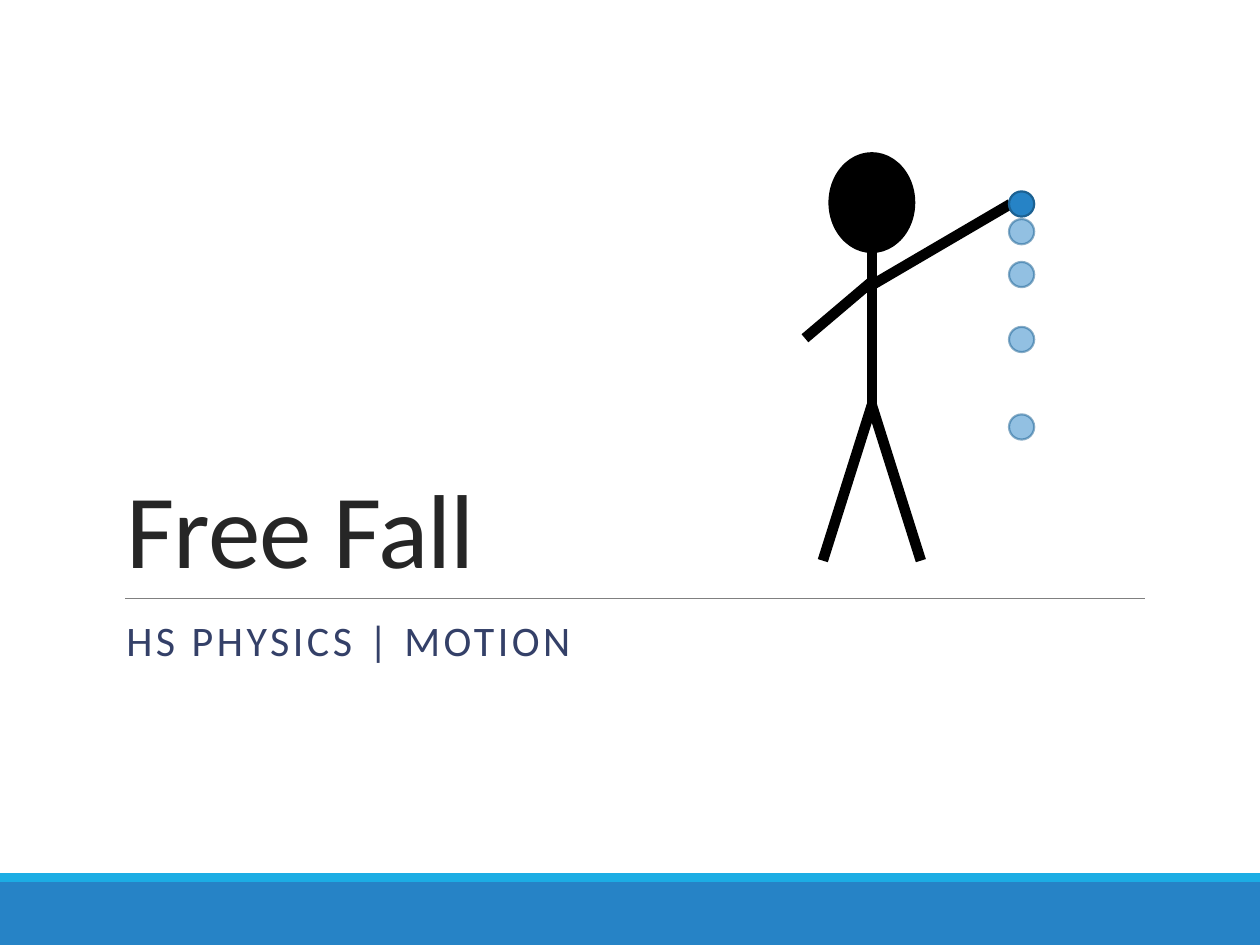
from pptx import Presentation
from pptx.dml.color import RGBColor
from pptx.enum.shapes import MSO_CONNECTOR, MSO_SHAPE
from pptx.enum.text import MSO_ANCHOR, MSO_AUTO_SIZE, PP_ALIGN
from pptx.oxml.ns import qn
from pptx.util import Pt
from lxml.etree import SubElement

BLUE = RGBColor(0x26, 0x83, 0xC6)
CYAN = RGBColor(0x1C, 0xAD, 0xE4)
EDGE = RGBColor(0x1C, 0x61, 0x92)
FADED = RGBColor(0x19, 0x5F, 0x91)
GREY = RGBColor(0x80, 0x80, 0x80)
DARK = RGBColor(0x26, 0x26, 0x26)
NAVY = RGBColor(0x34, 0x40, 0x68)
BLACK = RGBColor(0, 0, 0)


def add_form(slide, kind, box, fill, edge=None, alpha=None):
    form = slide.shapes.add_shape(kind, *map(Pt, box))
    form.shadow.inherit = False
    form.fill.solid()
    form.fill.fore_color.rgb = fill
    if edge is None:
        form.line.fill.background()
    else:
        form.line.color.rgb = edge
        form.line.width = Pt(1.25)
    if alpha is not None:
        for color in form._element.spPr.iter(qn("a:srgbClr")):
            SubElement(color, qn("a:alpha"), val=str(alpha * 1000))


def add_line(slide, start, end, color, width):
    line = slide.shapes.add_connector(
        MSO_CONNECTOR.STRAIGHT, *map(Pt, (*start, *end)))
    line.line.color.rgb = color
    line.line.width = Pt(width)
    SubElement(line._element.spPr, qn("a:effectLst"))


def fill_text(holder, box, text, anchor, track, para, font):
    sides = ("left", "top", "width", "height")
    for side, size in zip(sides, box):
        setattr(holder, side, Pt(size))
    frame = holder.text_frame
    frame.text = text
    frame.word_wrap = True
    frame.auto_size = MSO_AUTO_SIZE.NONE
    frame.vertical_anchor = anchor
    first = frame.paragraphs[0]
    run = first.runs[0]
    for name, value in para.items():
        setattr(first, name, value)
    for name, value in font.items():
        setattr(run.font, name, value)
    run.font.color.rgb = NAVY if track > 0 else DARK
    run._r.get_or_add_rPr().set("spc", str(round(track * 100)))


def add_footer(slide, box):
    left, top, width, height = box
    strip = 5
    add_form(slide, MSO_SHAPE.RECTANGLE,
             (left, top + strip, width, height - strip), BLUE)
    add_form(slide, MSO_SHAPE.RECTANGLE, (left, top, width, strip), CYAN)


def add_heads(slide, box):
    left, top, width, height = box
    rule = top + 282
    title, sub = slide.placeholders
    fill_text(title, (left, top, width, 281), "Free Fall",
              MSO_ANCHOR.BOTTOM, -0.5,
              {"alignment": PP_ALIGN.LEFT, "line_spacing": 0.85},
              {"name": "Calibri", "size": Pt(60)})
    fill_text(sub, (left, rule + 8.6, 594, height - 290.6),
              "HS PHYSICS | MOTION", MSO_ANCHOR.TOP, 2,
              {"alignment": PP_ALIGN.LEFT, "line_spacing": 0.9,
               "space_before": Pt(0), "space_after": Pt(2)},
              {"name": "Calibri", "size": Pt(24)})
    # Rule between title and subtitle
    add_line(slide, (left + 6.5, rule), (left + 589.5, rule), GREY, 0.5)


def add_man(slide, box):
    left, top, width, height = box
    mid = left + 38.2
    hip = (mid, top + 144)
    foot = top + height
    add_form(slide, MSO_SHAPE.OVAL, (mid - 24.2, top, 48.4, 56.4),
             BLACK, BLACK)
    limbs = [
        ((mid, top + 49), (mid, top + 147.5)),           # body
        (hip, (mid - 28, foot)),                         # legs
        (hip, (mid + 28, foot)),
        ((left, top + 105.7), (mid + 0.6, top + 72.8)),  # arms
        ((left + width, top + 29), (mid + 0.6, top + 75)),
    ]
    for start, end in limbs:
        add_line(slide, start, end, BLACK, 6)


def add_balls(slide, box):
    left, top, size, _ = box
    # Earlier ball last, so that it lies on top
    for drop in (15.8, 40.3, 77.4, 127.4):
        add_form(slide, MSO_SHAPE.OVAL, (left, top + drop, size, size),
                 BLUE, FADED, 50)
    add_form(slide, MSO_SHAPE.OVAL, (left, top, size, size), BLUE, EDGE)


def main():
    deck = Presentation()
    deck.slide_width, deck.slide_height = Pt(720), Pt(540)
    slide = deck.slides.add_slide(deck.slide_layouts[0])
    add_footer(slide, (0, 499, 720, 41))
    add_heads(slide, (65, 60, 620, 380.6))
    add_man(slide, (460, 87.6, 117.4, 232.8))
    add_balls(slide, (576.6, 109.4, 14.4, 141.8))
    deck.save("out.pptx")


if __name__ == "__main__":
    main()
